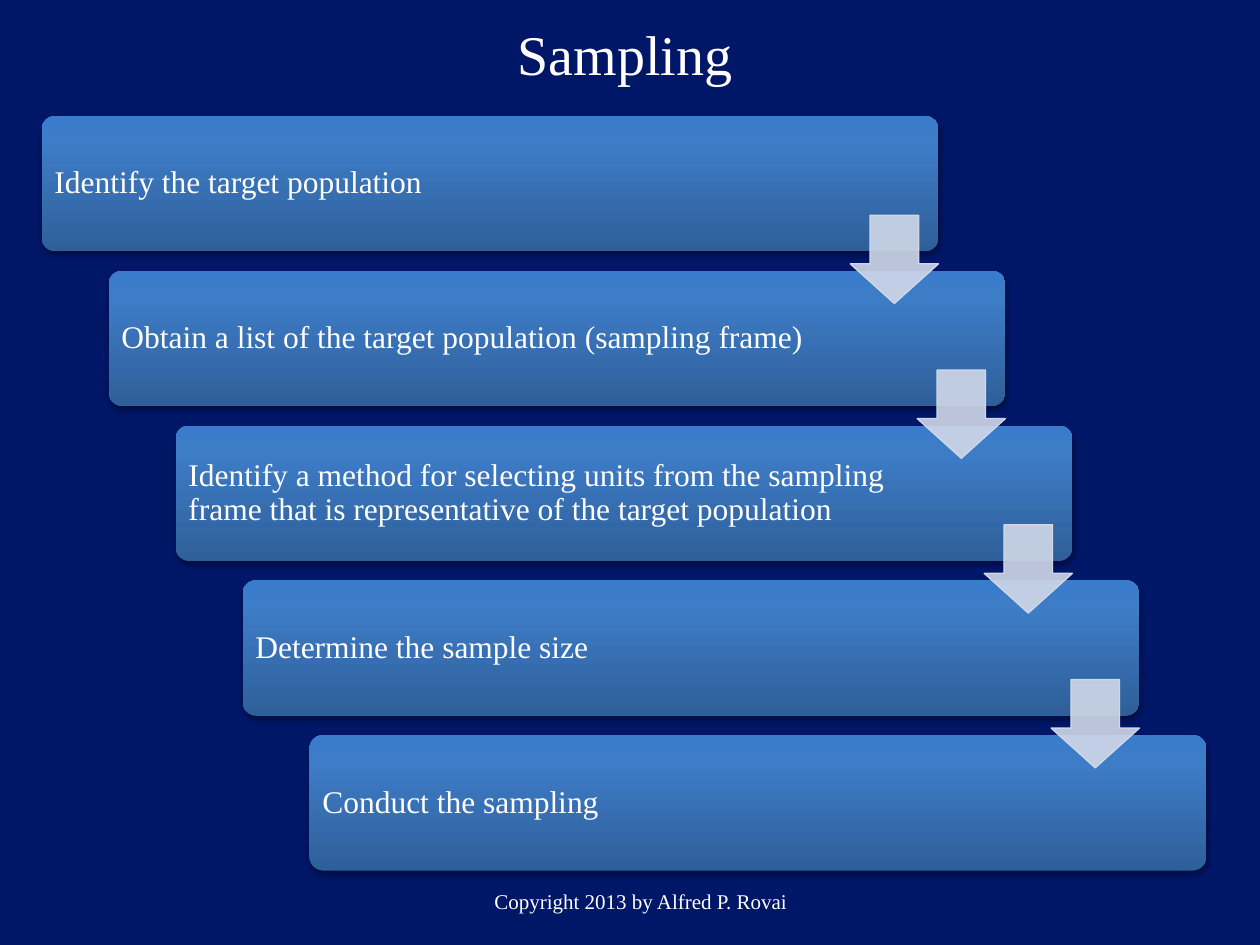
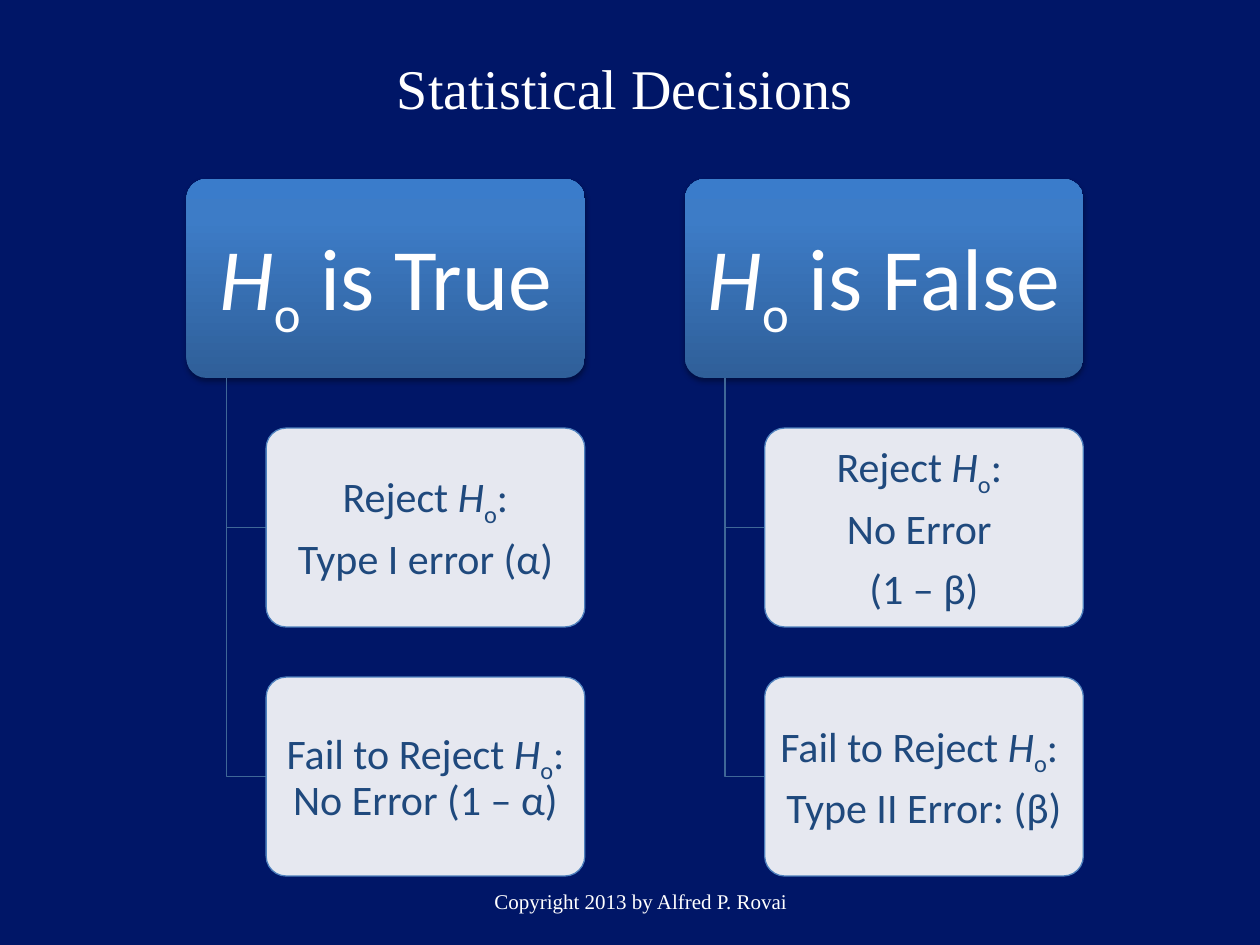
from dataclasses import dataclass

from lxml.etree import SubElement
from pptx import Presentation
from pptx.dml.color import RGBColor
from pptx.enum.shapes import MSO_SHAPE as Shape
from pptx.enum.text import MSO_ANCHOR as Anchor, PP_ALIGN as Align
from pptx.oxml.ns import qn
from pptx.util import Cm, Pt

# Content: a paragraph is a string or a list of (text, style) runs
FOOTER = "Copyright 2013 by Alfred P. Rovai"
SAMPLING_TITLE = "Sampling"
SAMPLING_STEPS = [
    "Identify the target population",
    "Obtain a list of the target population (sampling frame)",
    "Identify a method for selecting units from the sampling frame "
    "that is representative of the target population",
    "Determine the sample size",
    "Conduct the sampling",
]
NULL = [("H", "italic"), ("o", "subscript")]
REJECT = [("Reject ", ""), *NULL]
FAIL = [("Fail to Reject ", ""), *NULL]
DECISION_TITLE = "Statistical Decisions"
DECISIONS = [
    ([*NULL, (" is True", "")], [
        [[*REJECT, (":", "")], "Type I error (α)"],
        [[*FAIL, (": No Error (1 – α)", "")]],
    ]),
    ([*NULL, (" is False", "")], [
        [[*REJECT, (": ", "")], "No Error ", "(1 – β)"],
        [[*FAIL, (": ", "")], "Type II Error: (β)"],
    ]),
]


@dataclass(frozen=True)
class Theme:
    background: str = "001667"
    light: str = "FFFFFF"
    dark_text: str = "1F497D"
    card_line: str = "4F81BD"
    elbow: str = "3F6797"
    arrow: str = "D0D8E8"
    gradient: tuple = ((0, "2F5F99"), (80, "3D7CC7"), (100, "3A7CCB"))
    serif: str = "Times New Roman"
    sans: str = "Calibri"
    title_size: float = 32
    footer_size: float = 12
    step_size: float = 18
    head_size: float = 50
    card_size: float = 24


THEME = Theme()


# Text
def write(shape, paragraphs, *, size, font=THEME.serif, color=THEME.light,
          align=Align.CENTER, insets=(0.25, 0.13, 0.25, 0.13), spaced=False):
    frame = shape.text_frame
    frame.word_wrap = True
    frame.vertical_anchor = Anchor.MIDDLE
    (frame.margin_left, frame.margin_top,
     frame.margin_right, frame.margin_bottom) = map(Cm, insets)
    for index, content in enumerate(paragraphs):
        paragraph = frame.add_paragraph() if index else frame.paragraphs[0]
        paragraph.alignment = align
        if spaced:
            paragraph.line_spacing = 0.9
            paragraph.space_after = Pt(0.35 * size)
        runs = [(content, "")] if isinstance(content, str) else content
        for text, style in runs:
            run = paragraph.add_run()
            run.text = text
            run.font.name = font
            run.font.size = Pt(size)
            run.font.color.rgb = RGBColor.from_string(color)
            run.font.italic = style == "italic"
            if style == "subscript":
                run._r.get_or_add_rPr().set("baseline", "-25000")


# Shapes
def add_color(parent, color, alpha=None):
    element = SubElement(parent, qn("a:srgbClr"), val=color)
    if alpha is not None:
        SubElement(element, qn("a:alpha"), val=str(alpha * 1000))


def paint_gradient(shape):
    shape.fill.gradient()
    gradient = shape._element.spPr.find(qn("a:gradFill"))
    for child in list(gradient):
        gradient.remove(child)
    stops = SubElement(gradient, qn("a:gsLst"))
    for position, color in THEME.gradient:
        add_color(SubElement(stops, qn("a:gs"), pos=str(position * 1000)), color)
    SubElement(gradient, qn("a:lin"), ang=str(270 * 60000), scaled="0")


def add_shadow(shape):
    effects = shape._element.spPr.find(qn("a:effectLst"))
    shadow = SubElement(effects, qn("a:outerShdw"), blurRad=str(Pt(3.1)),
                        dist=str(Pt(1.8)), dir=str(90 * 60000), rotWithShape="0")
    add_color(shadow, "000000", 35)


def set_line(shape, color):
    shape.line.color.rgb = RGBColor.from_string(color)
    shape.line.width = Pt(0.75)


def add_shape(slide, kind, box, adjustments):
    shape = slide.shapes.add_shape(kind, *map(Cm, box))
    shape.shadow.inherit = False
    for index, value in enumerate(adjustments):
        shape.adjustments[index] = value
    return shape


def add_gradient_box(slide, box):
    shape = add_shape(slide, Shape.ROUNDED_RECTANGLE, box, [0.1])
    paint_gradient(shape)
    shape.line.fill.background()
    add_shadow(shape)
    return shape


def add_translucent(slide, kind, box, adjustments, fill, line):
    shape = add_shape(slide, kind, box, adjustments)
    shape.fill.solid()
    shape.fill.fore_color.rgb = RGBColor.from_string(fill)
    color = shape._element.spPr.find(qn("a:solidFill"))[0]
    SubElement(color, qn("a:alpha"), val="90000")
    set_line(shape, line)
    return shape


def add_elbow(slide, x, top, bottom, right):
    builder = slide.shapes.build_freeform(Cm(x), Cm(top))
    builder.add_line_segments(
        [(Cm(x), Cm(bottom)), (Cm(right), Cm(bottom))], close=False)
    elbow = builder.convert_to_shape()
    elbow.shadow.inherit = False
    elbow.fill.background()
    set_line(elbow, THEME.elbow)


# Shared slide frame
def add_slide(presentation, title, title_top):
    slide = presentation.slides.add_slide(presentation.slide_layouts[5])
    heading = slide.shapes.title
    heading.left, heading.top, heading.width, heading.height = map(
        Cm, (1.07, title_top, 23.06, 1.98))
    write(heading, [title], size=THEME.title_size)
    footer = slide.shapes.add_textbox(*map(Cm, (4.45, 17.65, 16.94, 1.02)))
    write(footer, [FOOTER], size=THEME.footer_size)
    return slide


# Staircase of steps with an arrow from each to the next
def build_sampling(presentation):
    slide = add_slide(presentation, SAMPLING_TITLE, 0.08)
    left, top, width, height = 0.84, 2.34, 18.08, 2.73
    shift, drop, arrow, arrow_drop = 1.35, 3.12, 1.78, 2
    corners = [(left + i * shift, top + i * drop)
               for i in range(len(SAMPLING_STEPS))]
    for (x, y), step in zip(corners, SAMPLING_STEPS):
        box = add_gradient_box(slide, (x, y, width, height))
        write(box, [step], size=THEME.step_size, align=Align.LEFT,
              insets=(0.18, 0.18, 3.3, 0.18), spaced=True)
    for x, y in corners[:-1]:
        add_translucent(slide, Shape.DOWN_ARROW,
                        (x + width - arrow, y + arrow_drop, arrow, arrow),
                        [0.45, 0.55][::-1], THEME.arrow, THEME.arrow)


# Two hypotheses, each with its outcomes hanging below
def build_decisions(presentation):
    slide = add_slide(presentation, DECISION_TITLE, 0.76)
    left, top, width, height = 3.76, 3.61, 8.03, 4.01
    column_pitch, row_pitch = 10.05, 5.02
    for column, (hypothesis, outcomes) in enumerate(DECISIONS):
        x = left + column * column_pitch
        head = add_gradient_box(slide, (x, top, width, height))
        write(head, [hypothesis], size=THEME.head_size, font=THEME.sans,
              insets=(0.25, 0.18, 0.25, 0.18), spaced=True)
        card_left = x + 0.2 * width
        for row, outcome in enumerate(outcomes, start=1):
            y = top + row * row_pitch
            add_elbow(slide, x + 0.1 * width, top + height,
                      y + height / 2, card_left)
            card = add_translucent(slide, Shape.ROUNDED_RECTANGLE,
                                   (card_left, y, 0.8 * width, height),
                                   [0.1], THEME.light, THEME.card_line)
            write(card, outcome, size=THEME.card_size, font=THEME.sans,
                  color=THEME.dark_text, insets=(0.13, 0.08, 0.13, 0.08),
                  spaced=True)


def main():
    presentation = Presentation()
    presentation.slide_width, presentation.slide_height = Cm(25.4), Cm(19.05)
    background = presentation.slide_master.background.fill
    background.solid()
    background.fore_color.rgb = RGBColor.from_string(THEME.background)
    build_sampling(presentation)
    build_decisions(presentation)
    presentation.save("out.pptx")


if __name__ == "__main__":
    main()
